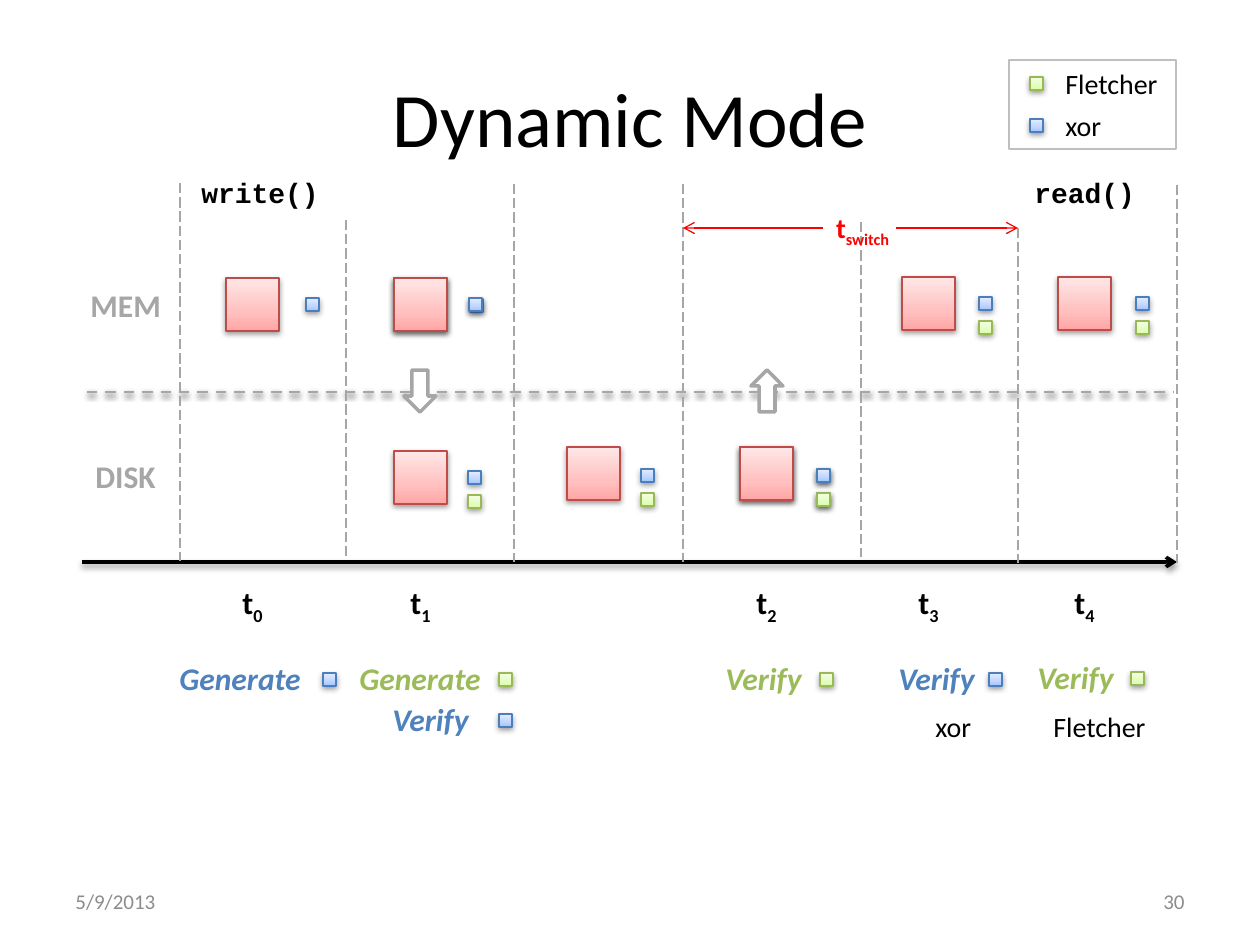
from lxml.etree import SubElement
from pptx import Presentation
from pptx.dml.color import RGBColor
from pptx.enum.dml import MSO_LINE_DASH_STYLE as DASH
from pptx.enum.shapes import MSO_CONNECTOR, MSO_SHAPE
from pptx.enum.text import MSO_ANCHOR as ANCHOR, PP_ALIGN as ALIGN
from pptx.oxml.ns import qn
from pptx.util import Pt

BLACK = RGBColor(0x00, 0x00, 0x00)
WHITE = RGBColor(0xFF, 0xFF, 0xFF)
GRAY = RGBColor(0xA6, 0xA6, 0xA6)
FRAME = RGBColor(0xBF, 0xBF, 0xBF)
FOOTER = RGBColor(0x8C, 0x8C, 0x8C)
RED = RGBColor(0xFF, 0x00, 0x00)
BLUE = RGBColor(0x4F, 0x81, 0xBD)
GREEN = RGBColor(0x9B, 0xBB, 0x59)
BLUE_LINE = RGBColor(0x4B, 0x7E, 0xBC)
GREEN_LINE = RGBColor(0x98, 0xB9, 0x55)
PINK_LINE = RGBColor(0xBF, 0x4C, 0x48)

XOR = (BLUE_LINE, ("A4C4FF", "BFD4FF", "E6EEFF"))
FLETCHER = (GREEN_LINE, ("DAFDA7", "E4FCC2", "F5FFE7"))
DATA = (PINK_LINE, ("FFA6A5", "FFC0BF", "FFE7E7"))
STOPS = (0, 35000, 100000)

BLOCK, CHIP, CHIP_STEP = 53, 13, 24
T0, T1, IDLE, T2, T3, T4 = 226, 394, 567, 740, 902, 1058


def px(n):
    return round(n * 914400 / 126)


def add_effects(sp, shadow):
    effects = SubElement(sp._element.spPr, qn("a:effectLst"))
    if shadow:
        outer = SubElement(effects, qn("a:outerShdw"), blurRad="40000",
                           dist="20000", dir="5400000", rotWithShape="0")
        clr = SubElement(outer, qn("a:srgbClr"), val="000000")
        SubElement(clr, qn("a:alpha"), val="38000")


def add_square(s, x, y, size, style):
    line, colors = style
    sp = s.shapes.add_shape(MSO_SHAPE.RECTANGLE, px(x), px(y), px(size), px(size))
    grad = SubElement(sp._element.spPr, qn("a:gradFill"), rotWithShape="1")
    stops = SubElement(grad, qn("a:gsLst"))
    for pos, color in zip(STOPS, colors):
        gs = SubElement(stops, qn("a:gs"), pos=str(pos))
        SubElement(gs, qn("a:srgbClr"), val=color)
    SubElement(grad, qn("a:lin"), ang="16200000", scaled="0")
    sp.line.color.rgb = line
    sp.line.width = Pt(0.75)
    add_effects(sp, True)


def add_chip_pair(s, x, y, styles=(XOR, FLETCHER)):
    for i, style in enumerate(styles):
        add_square(s, x, y + i * CHIP_STEP, CHIP, style)


def add_plain(s, kind, x, y, w, h, line, width, rotation=0):
    sp = s.shapes.add_shape(kind, px(x), px(y), px(w), px(h))
    sp.rotation = rotation
    sp.shadow.inherit = False
    sp.fill.solid()
    sp.fill.fore_color.rgb = WHITE
    sp.line.color.rgb = line
    sp.line.width = Pt(width)


def add_line(s, x1, y1, x2, y2, color, width=0.75, dash=None, arrow=False, shadow=False):
    cn = s.shapes.add_connector(MSO_CONNECTOR.STRAIGHT, px(x1), px(y1), px(x2), px(y2))
    cn.line.color.rgb = color
    cn.line.width = Pt(width)
    if dash:
        cn.line.dash_style = dash
    if arrow:
        SubElement(cn.line._ln, qn("a:tailEnd"), type="arrow")
    add_effects(cn, shadow)


def add_run(p, text, size, color, font="Calibri", bold=False, italic=False, sub=False):
    r = p.add_run()
    r.text = text
    r.font.name = font
    r.font.size = Pt(size)
    r.font.color.rgb = color
    r.font.bold = bold
    r.font.italic = italic
    if sub:
        r._r.get_or_add_rPr().set("baseline", "-25000")


def add_text(s, x, y, w, h, text, size, color, sub="", align=ALIGN.LEFT,
             anchor=ANCHOR.TOP, wrap=True, **style):
    tf = s.shapes.add_textbox(px(x), px(y), px(w), px(h)).text_frame
    tf.word_wrap = wrap
    tf.vertical_anchor = anchor
    p = tf.paragraphs[0]
    p.alignment = align
    add_run(p, text, size, color, **style)
    if sub:
        add_run(p, sub, size, color, sub=True, **style)


def add_title(s, text):
    sp = s.shapes.title
    sp.left, sp.top, sp.width, sp.height = px(63), px(38), px(1134), px(157)
    tf = sp.text_frame
    tf.vertical_anchor = ANCHOR.MIDDLE
    tf.paragraphs[0].alignment = ALIGN.CENTER
    add_run(tf.paragraphs[0], text, 44, BLACK)


def add_legend(s):
    add_plain(s, MSO_SHAPE.RECTANGLE, 1009, 60, 167, 89, FRAME, 0.75)
    for y, name, style in ((60, "Fletcher", FLETCHER), (102, "xor", XOR)):
        add_square(s, 1030, y + 17, CHIP, style)
        add_text(s, 1053, y, 136, 47, name, 16, BLACK)


def add_timeline(s):
    add_line(s, 87, 392, 1173, 392, GRAY, 1.5, DASH.DASH, shadow=True)
    add_line(s, 82, 562, 1177, 562, BLACK, 2, arrow=True, shadow=True)
    for x, top, bottom in ((180, 183, 561), (346, 220, 556), (514, 184, 562),
                           (683, 184, 562), (861, 222, 557), (1018, 228, 563),
                           (1177, 185, 563)):
        add_line(s, x, top, x, bottom, GRAY, dash=DASH.LONG_DASH)
    for x, y, w, name in ((78, 280, 97, "MEM"), (83, 451, 87, "DISK")):
        add_text(s, x, y, w, 50, name, 18, GRAY, bold=True, wrap=False)
    for x, name in ((189, "write()"), (1022, "read()")):
        add_text(s, x, 169, 159, 47, name, 16, BLACK, font="Courier New", bold=True)
    for i, x in enumerate((T0, T1, T2, T3, T4)):
        add_text(s, x, 577, BLOCK, BLOCK, "t", 18, BLACK, sub=str(i),
                 align=ALIGN.CENTER, bold=True)
    for start, end in ((896, 1018), (823, 683)):
        add_line(s, start, 228, end, 228, RED, arrow=True)
    add_text(s, 804, 204, 117, 47, "t", 16, RED, sub="switch",
             align=ALIGN.CENTER, bold=True)


def add_data(s):
    for x, y in ((T0, 278), (T1, 278), (T1, 278), (T3, 277), (T4, 277),
                 (T1, 451), (IDLE, 447), (T2, 447), (T2, 447)):
        add_square(s, x, y, BLOCK, DATA)
    for x, y in ((306, 298), (470, 299), (469, 298)):
        add_square(s, x, y, CHIP, XOR)
    add_chip_pair(s, 817, 469, (FLETCHER, XOR))
    for x, y in ((468, 471), (641, 469), (817, 469), (979, 297), (1136, 297)):
        add_chip_pair(s, x, y)
    for x, rotation in ((404, 0), (751, 180)):
        add_plain(s, MSO_SHAPE.DOWN_ARROW, x, 370, 32, 42, GRAY, 2, rotation)


def add_actions(s):
    for x, y, w, name, color, chip_x, style in (
            (167, 653, 149, "Generate", BLUE, 323, XOR),
            (347, 653, 149, "Generate", GREEN, 499, FLETCHER),
            (380, 694, 105, "Verify", BLUE, 499, XOR),
            (713, 653, 105, "Verify", GREEN, 820, FLETCHER),
            (886, 653, 105, "Verify", BLUE, 989, XOR),
            (1025, 652, 105, "Verify", GREEN, 1131, FLETCHER)):
        add_text(s, x, y, w, 50, name, 18, color, bold=True, italic=True)
        add_square(s, chip_x, y + 20, CHIP, style)
    for x, name in ((923, "xor"), (1041, "Fletcher")):
        add_text(s, x, 703, 136, 47, name, 16, BLACK)


def add_footer(s):
    for x, text, align in ((63, "5/9/2013", ALIGN.LEFT), (903, "30", ALIGN.RIGHT)):
        add_text(s, x, 876, 294, 50, text, 12, FOOTER, align=align, anchor=ANCHOR.MIDDLE)


def main():
    prs = Presentation()
    prs.slide_width, prs.slide_height = px(1260), px(945)
    s = prs.slides.add_slide(prs.slide_layouts[5])
    add_title(s, "Dynamic Mode")
    add_timeline(s)
    add_data(s)
    add_legend(s)
    add_actions(s)
    add_footer(s)
    prs.save("out.pptx")


if __name__ == "__main__":
    main()
